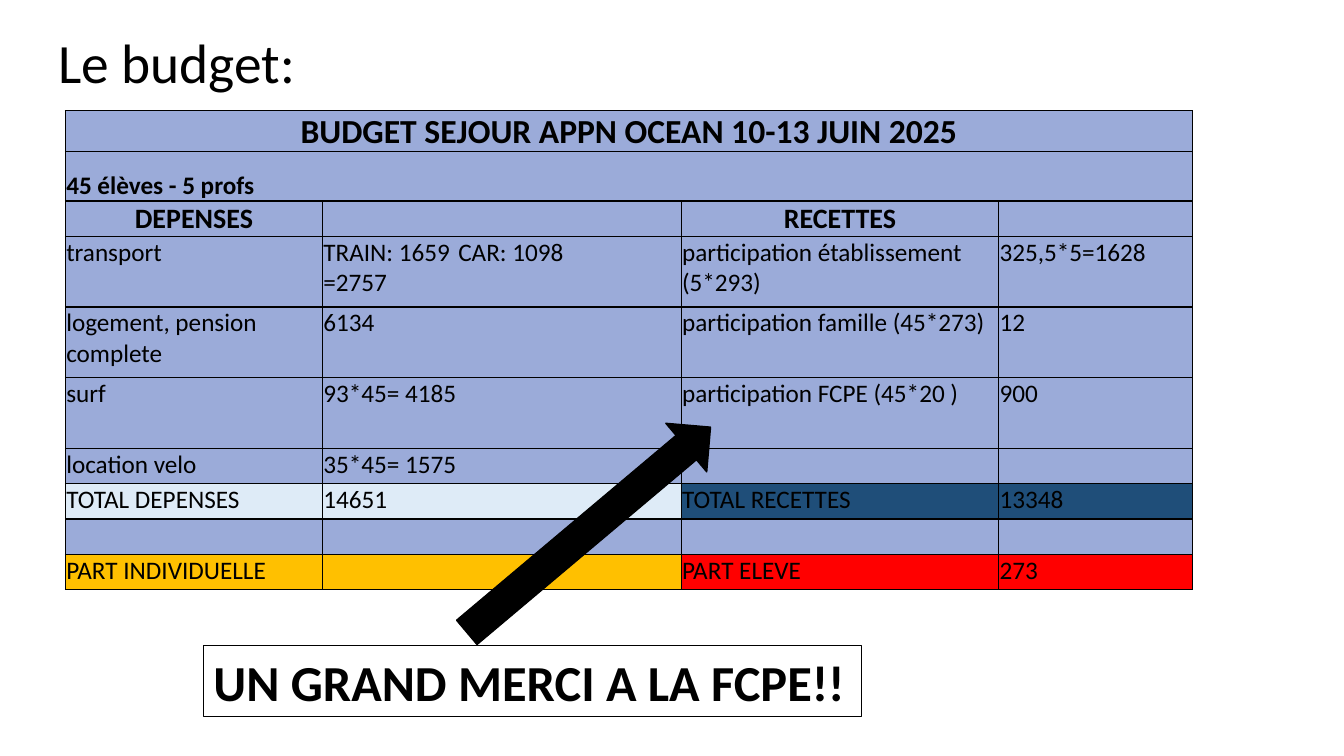
"""Build the budget slide of a school trip, with its table and a thank-you note."""
from lxml import etree
from pptx import Presentation
from pptx import util as u
from pptx.dml.color import RGBColor
from pptx.enum import shapes, text
from pptx.oxml.ns import qn

BLACK = RGBColor(0x00, 0x00, 0x00)
BLUE = RGBColor(0x9B, 0xAB, 0xD9)
PALE = RGBColor(0xDE, 0xEB, 0xF7)
NAVY = RGBColor(0x1F, 0x4E, 0x79)
GOLD = RGBColor(0xFF, 0xC0, 0x00)
RED = RGBColor(0xFF, 0x00, 0x00)

TITLE = "Le budget:"
THANKS = "UN GRAND MERCI A LA FCPE!!"
ROWS = [
    ["BUDGET SEJOUR APPN OCEAN 10-13 JUIN 2025", "", "", ""],
    ["45 élèves - 5 profs", "", "", ""],
    ["DEPENSES", "", "RECETTES", ""],
    ["transport", "TRAIN: 1659\tCAR: 1098\n=2757",
     "participation établissement (5*293)", "325,5*5=1628"],
    ["logement, pension complete", "6134", "participation famille (45*273)", "12"],
    ["surf", "93*45= 4185", "participation FCPE (45*20 )", "900"],
    ["location velo", "35*45= 1575", "", ""],
    ["TOTAL DEPENSES", "14651", "TOTAL RECETTES", "13348"],
    ["", "", "", ""],
    ["PART INDIVIDUELLE", "", "PART ELEVE", "273"],
]
WIDTHS = [6.48, 9.04, 8, 4.88]
HEIGHTS = [0.99, 1.24, 0.89] + [1.78] * 3 + [0.89] * 4
FILLS = {7: (PALE, NAVY), 9: (GOLD, RED)}
MERGED = (0, 1)
HEADS = {
    0: dict(size=24, bold=True, align=text.PP_ALIGN.CENTER),
    1: dict(size=18, bold=True),
    2: dict(size=20, bold=True, align=text.PP_ALIGN.CENTER),
}
TAB = 3.4


def write(frame, words, size=18, bold=False, align=text.PP_ALIGN.LEFT, lead=None):
    frame.text = words
    for para in frame.paragraphs:
        para.alignment = align
        para.line_spacing = lead
        for run in para.runs:
            font = run.font
            font.name, font.size, font.bold = "Calibri", u.Pt(size), bold
            font.color.rgb = BLACK
        if "\t" in words:
            tabs = etree.SubElement(para._p.get_or_add_pPr(), qn("a:tabLst"))
            etree.SubElement(tabs, qn("a:tab"), pos=str(u.Cm(TAB)), algn="l")


def edge(cell):
    props = cell._tc.get_or_add_tcPr()
    for side in "LRTB":
        line = etree.SubElement(props, qn("a:ln" + side), w=str(u.Pt(1)))
        fill = etree.SubElement(line, qn("a:solidFill"))
        etree.SubElement(fill, qn("a:srgbClr"), val=str(BLACK))


def draw_table(slide):
    frame = slide.shapes.add_table(len(ROWS), len(WIDTHS), u.Cm(1.65), u.Cm(2.79),
                                   u.Cm(sum(WIDTHS)), u.Cm(sum(HEIGHTS)))
    table = frame.table
    table.first_row = table.horz_banding = False
    for col, width in zip(table.columns, WIDTHS):
        col.width = u.Cm(width)
    for r, row in enumerate(ROWS):
        table.rows[r].height = u.Cm(HEIGHTS[r])
        for c, words in enumerate(row):
            cell = table.cell(r, c)
            cell.margin_left = cell.margin_right = cell.margin_top = u.Cm(0.02)
            cell.margin_bottom = 0
            cell.vertical_anchor = text.MSO_ANCHOR.BOTTOM if r in HEADS else text.MSO_ANCHOR.TOP
            edge(cell)
            cell.fill.solid()
            cell.fill.fore_color.rgb = FILLS.get(r, (BLUE, BLUE))[c // 2]
            write(cell.text_frame, words, **HEADS.get(r, {}))
    for r in MERGED:
        table.cell(r, 0).merge(table.cell(r, len(WIDTHS) - 1))


def draw_shape(slide, kind, left, top, width, height, line):
    shape = slide.shapes.add_shape(kind, u.Cm(left), u.Cm(top), u.Cm(width), u.Cm(height))
    shape.shadow.inherit = False
    shape.line.color.rgb = BLACK
    shape.line.width = u.Pt(line)
    return shape


def main():
    deck = Presentation()
    deck.slide_width, deck.slide_height = u.Cm(33.87), u.Cm(19.05)
    slide = deck.slides.add_slide(deck.slide_layouts[6])

    title = slide.shapes.add_textbox(u.Cm(1.22), u.Cm(0.75), u.Cm(29.21), u.Cm(1.8)).text_frame
    title.word_wrap = True
    title.vertical_anchor = text.MSO_ANCHOR.MIDDLE
    write(title, TITLE, size=39.6, lead=0.9)

    draw_table(slide)

    arrow = draw_shape(slide, shapes.MSO_SHAPE.RIGHT_ARROW, 10.82, 12.55, 8.03, 1.6, 1)
    arrow.rotation = 319.9
    arrow.fill.solid()
    arrow.fill.fore_color.rgb = BLACK

    note = draw_shape(slide, shapes.MSO_SHAPE.RECTANGLE, 5.13, 16.26, 16.59, 1.8, 0.75)
    note.fill.background()
    note.text_frame.word_wrap = False
    write(note.text_frame, THANKS, size=36, bold=True)

    deck.save("out.pptx")


if __name__ == "__main__":
    main()
